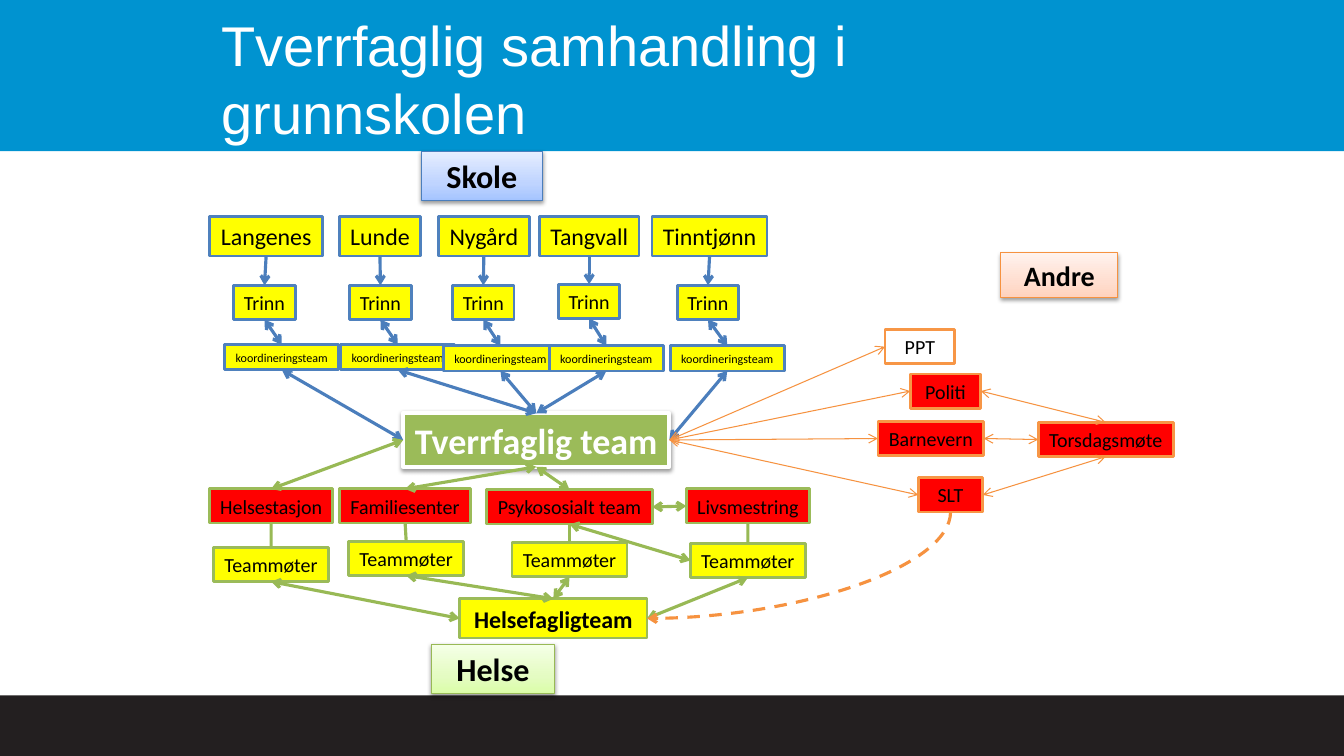
"""Build the slide on interdisciplinary cooperation in primary school."""
from copy import deepcopy

from lxml import etree
from pptx import Presentation
from pptx import util as u
from pptx.dml.color import RGBColor
from pptx.enum import dml, shapes, text
from pptx.oxml.ns import qn

TITLE = "Tverrfaglig samhandling i grunnskolen"
BLACK, WHITE, YELLOW, RED = "000000", "FFFFFF", "FFFF00", "FF0000"
BLUE, GREEN, ORANGE = "4F81BD", "9BBB59", "F79646"
BLUE_LINE, GREEN_LINE, ORANGE_LINE = "4B7EBC", "98B955", "F69240"
TOP, LEFT, BOTTOM, RIGHT = range(4)

BANDS = [(496.8, 43.2, "231F20"), (0, 108, "0093D0")]

HEADINGS = [
    ("Skole", (301, 108, 86.4, 35.3), 22.9, BLUE_LINE, ("A4C4FF", "BFD4FF", "E6EEFF")),
    ("Helse", (308.2, 460.1, 87.8, 35.3), 22.9, GREEN_LINE, ("DAFDA7", "E4FCC2", "F5FFE7")),
    ("Andre", (715, 180.7, 83.5, 31.7), 20, ORANGE_LINE, ("FFD2BD", "FFDED0", "FFF2ED")),
]

SCHOOLS = [
    ("Langenes", 149.8, 80.6, (167, 203.8), (160.6, 246.2)),
    ("Lunde", 242.6, 57.6, (249.8, 203.8), (243.4, 246.2)),
    ("Nygård", 313.2, 64.8, (323.3, 203.8), (316.8, 247)),
    ("Tangvall", 385.2, 71.3, (398.9, 203), (392.4, 247)),
    ("Tinntjønn", 465.8, 82.1, (483.8, 203.8), (478.8, 247)),
]
SCHOOL_TEAM_SIDES = [LEFT, TOP, TOP, TOP, RIGHT]

SERVICES = [
    ("Helsestasjon", 149.8, 349.2, 87.8, (152.6, 391)),
    ("Familiesenter", 242.6, 349.2, 93.6, (249.1, 386.6)),
    ("Psykososialt team", 347.8, 349.9, 118.1, (365.8, 387.4)),
    ("Livsmestring", 490.3, 349.2, 87.8, (493.2, 388.1)),
]

OTHERS = [
    ("Torsdagsmøte", 741.6, 301.7, 96.5, RED),
    ("PPT", 632.2, 235.4, 49.7, WHITE),
    ("Politi", 650.2, 267.1, 50.4, RED),
    ("Barnevern", 627.1, 301, 75.6, RED),
    ("SLT", 655.9, 341.3, 46.1, RED),
]

GREEN_ARROWS = [
    ("Helsestasjon", TOP, "Tverrfaglig team", LEFT),
    ("Familiesenter", TOP, "Tverrfaglig team", BOTTOM),
    ("Psykososialt team", TOP, "Tverrfaglig team", BOTTOM),
    ("Livsmestring møter", LEFT, "Psykososialt team", BOTTOM),
    ("Livsmestring", LEFT, "Psykososialt team", RIGHT),
    ("Helsefagligteam", LEFT, "Helsestasjon møter", BOTTOM),
    ("Helsefagligteam", TOP, "Familiesenter møter", BOTTOM),
    ("Helsefagligteam", TOP, "Psykososialt team møter", BOTTOM),
    ("Helsefagligteam", RIGHT, "Livsmestring møter", BOTTOM),
]

ORANGE_ARROWS = [
    *((name, LEFT, "Tverrfaglig team", RIGHT) for name in ("PPT", "Politi", "Barnevern", "SLT")),
    ("Politi", RIGHT, "Torsdagsmøte", TOP),
    ("Barnevern", RIGHT, "Torsdagsmøte", LEFT),
    ("SLT", RIGHT, "Torsdagsmøte", BOTTOM),
]

deck = Presentation()
deck.slide_width, deck.slide_height = u.Pt(960), u.Pt(540)
page = deck.slides.add_slide(deck.slide_layouts[6])
boxes = {}


def color(value):
    return RGBColor.from_string(value)


def write(shape, words, size, font, ink, bold=False):
    para = shape.text_frame.paragraphs[0]
    para.text = words
    para.font.size, para.font.name, para.font.bold = u.Pt(size), font, bold
    para.font.color.rgb = color(ink)
    shape.text_frame.vertical_anchor = text.MSO_ANCHOR.MIDDLE
    return para


def add_rect(place, fill):
    box = page.shapes.add_shape(shapes.MSO_SHAPE.RECTANGLE, *map(u.Pt, place))
    box.shadow.inherit = False
    box.fill.solid()
    box.fill.fore_color.rgb = color(fill)
    box.line.fill.background()
    return box


def add_box(key, words, place, fill, outline, size, width=2, ink=BLACK, bold=False):
    box = add_rect(place, fill)
    box.line.color.rgb, box.line.width = color(outline), u.Pt(width)
    write(box, words, size, "Calibri", ink, bold).alignment = text.PP_ALIGN.CENTER
    box.text_frame.word_wrap = False
    boxes[key] = box
    return box


def add_shadow(box):
    effects = box._element.spPr.find(qn("a:effectLst"))
    shade = etree.SubElement(effects, qn("a:outerShdw"), blurRad=str(u.Pt(3.1)),
                             dist=str(u.Pt(1.6)), dir="5400000", rotWithShape="0")
    tone = etree.SubElement(shade, qn("a:srgbClr"), val=BLACK)
    etree.SubElement(tone, qn("a:alpha"), val="38000")


def add_gradient(box, colors):
    box.fill.gradient()
    box.fill.gradient_angle = 90
    stops = box._element.spPr.find(".//" + qn("a:gsLst"))
    stops.append(deepcopy(stops[0]))
    for stop, position, value in zip(box.fill.gradient_stops, (0, 0.35, 1), colors):
        stop.position, stop.color.rgb = position, color(value)


def connect(start, start_side, end, end_side, ink, width=2.25, ends=("headEnd", "tailEnd"),
            kind=shapes.MSO_CONNECTOR.STRAIGHT):
    link = page.shapes.add_connector(kind, 0, 0, 0, 0)
    link.begin_connect(boxes[start], start_side)
    link.end_connect(boxes[end], end_side)
    link.line.color.rgb, link.line.width = color(ink), u.Pt(width)
    for tip in ends:
        etree.SubElement(link.line._get_or_add_ln(), qn("a:" + tip), type="arrow")
    etree.SubElement(link._element.spPr, qn("a:effectLst"))
    return link


def add_quarter_curve(start, end):
    link = connect(start, BOTTOM, end, RIGHT, ORANGE_LINE, ends=["tailEnd"],
                   kind=shapes.MSO_CONNECTOR.CURVE)
    link.line.dash_style = dml.MSO_LINE.DASH
    across, down = link.width, link.height
    link.left += (across - down) // 2
    link.top += (down - across) // 2
    link.width, link.height = down, across
    frame = link._element.spPr.find(qn("a:xfrm"))
    frame.attrib.pop("flipH", None)
    frame.set("rot", "5400000")
    link._element.spPr.find(qn("a:prstGeom")).set("prst", "curvedConnector2")


def main():
    for top, height, fill in BANDS:
        add_rect((0, top, 960, height), fill)
    title = page.shapes.add_textbox(*map(u.Pt, (148.3, 10.8, 692, 90)))
    frame = title.text_frame
    frame.word_wrap = True
    frame.margin_left = frame.margin_right = u.Pt(10)
    frame.margin_top = frame.margin_bottom = u.Pt(5)
    write(title, TITLE, 40, "Arial", WHITE)

    for words, place, size, outline, colors in HEADINGS:
        box = add_box(words, words, place, WHITE, outline, size, 0.75, bold=True)
        add_gradient(box, colors)
        add_shadow(box)
    for name, left, width, step, group in SCHOOLS:
        add_box(name, name, (left, 154.8, width, 28.1), YELLOW, BLUE, 17.1)
        add_box(name + " trinn", "Trinn", (*step, 43.9, 24.5), YELLOW, BLUE, 14.3)
        add_box(name + " koordinering", "koordineringsteam", (*group, 81.4, 18), YELLOW, BLUE, 8.6)
    add_shadow(add_box("Tverrfaglig team", "Tverrfaglig team", (288, 295.2, 190.1, 38.2),
                       GREEN, WHITE, 25.7, 3, WHITE, True))
    add_box("Helsefagligteam", "Helsefagligteam", (328.3, 427.7, 133.9, 28.1),
            YELLOW, GREEN, 17.1, bold=True)
    for name, left, top, width, meeting in SERVICES:
        add_box(name + " møter", "Teammøter", (*meeting, 82.1, 24.5), YELLOW, GREEN, 14.3)
        add_box(name, name, (left, top, width, 24.5), RED, GREEN, 14.3)
    for name, left, top, width, fill in OTHERS:
        add_box(name, name, (left, top, width, 24.5), fill, ORANGE, 14.3)

    for (name, *_), side in zip(SCHOOLS, SCHOOL_TEAM_SIDES):
        step, group = name + " trinn", name + " koordinering"
        connect(name, BOTTOM, step, TOP, BLUE_LINE, ends=["tailEnd"])
        connect(step, BOTTOM, group, TOP, BLUE_LINE)
        connect(group, BOTTOM, "Tverrfaglig team", side, BLUE_LINE)
    for name, *_ in SERVICES:
        connect(name, BOTTOM, name + " møter", TOP, GREEN_LINE, ends=[])
    for ends in GREEN_ARROWS:
        connect(*ends, GREEN_LINE)
    for ends in ORANGE_ARROWS:
        connect(*ends, ORANGE_LINE, 0.75)
    add_quarter_curve("SLT", "Helsefagligteam")
    deck.save("out.pptx")


if __name__ == "__main__":
    main()
